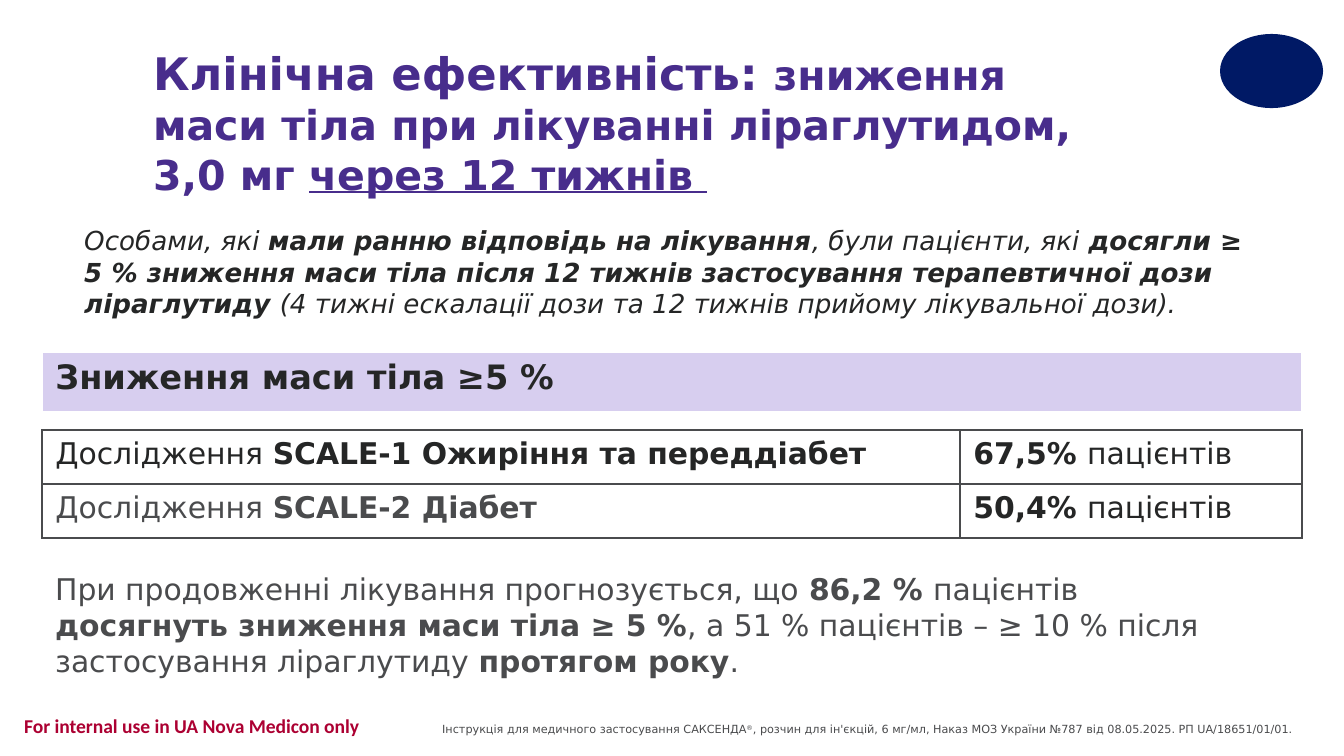
from lxml import etree
from pptx import Presentation
from pptx.dml.color import RGBColor
from pptx.enum.shapes import MSO_SHAPE
from pptx.enum.text import MSO_ANCHOR, MSO_AUTO_SIZE, PP_ALIGN
from pptx.oxml.ns import qn
from pptx.util import Emu, Pt

OVAL = MSO_SHAPE.OVAL
TOP = MSO_ANCHOR.TOP
NO_FIT, GROW = MSO_AUTO_SIZE.NONE, MSO_AUTO_SIZE.SHAPE_TO_FIT_TEXT
LEFT, RIGHT = PP_ALIGN.LEFT, PP_ALIGN.RIGHT

PURPLE = RGBColor(0x48, 0x2D, 0x8C)
LILAC = RGBColor(0xD7, 0xCE, 0xEF)
INK = RGBColor(0x25, 0x26, 0x26)
GREY = RGBColor(0x4A, 0x4B, 0x4D)
CRIMSON = RGBColor(0xAC, 0x00, 0x32)
NAVY = RGBColor(0x00, 0x19, 0x65)
WHITE = RGBColor(0xFF, 0xFF, 0xFF)

EMU_PER_PX = 914400 / 134.4
SLIDE_WIDTH, SLIDE_HEIGHT = 1344, 756
MARGIN = 42
TABLE_WIDTH = SLIDE_WIDTH - 2 * MARGIN


def px(length):
    return Emu(round(length * EMU_PER_PX))


class SlideBuilder:
    font = "DejaVu Sans"

    def __init__(self, deck):
        self.page = deck.slides.add_slide(deck.slide_layouts[5])

    def add_spans(self, para, spans, size, color, font=None, **shared):
        """Add (text, settings) spans; shared settings apply to all of them."""
        for text, settings in spans:
            style = {**shared, **settings}
            span = para.add_run()
            span.text = text
            span.font.name = font or self.font
            span.font.size = Pt(style.get("size", size))
            span.font.color.rgb = color
            span.font.bold = style.get("bold", False)
            span.font.italic = style.get("italic")
            span.font.underline = style.get("underline")
            if style.get("superscript"):
                span.font._element.set("baseline", "30000")

    def set_insets(self, text_frame, left, top, right, bottom):
        text_frame.margin_left, text_frame.margin_top = px(left), px(top)
        text_frame.margin_right, text_frame.margin_bottom = px(right), px(bottom)

    def title(self, frame, spans, size, color):
        box = self.page.shapes.title
        box.left, box.top, box.width, box.height = map(px, frame)
        self.set_insets(box.text_frame, 0, 0, 0, 0)
        box.text_frame.word_wrap = True
        box.text_frame.auto_size = NO_FIT
        box.text_frame.vertical_anchor = TOP
        para = box.text_frame.paragraphs[0]
        para.alignment = LEFT
        self.add_spans(para, spans, size, color, bold=True)

    def text(self, frame, spans, size, color, insets=None, align=LEFT,
             fit=GROW, spacing=None, **shared):
        box = self.page.shapes.add_textbox(*map(px, frame))
        box.text_frame.word_wrap = True
        box.text_frame.auto_size = fit
        if insets:
            self.set_insets(box.text_frame, *insets)
        para = box.text_frame.paragraphs[0]
        para.alignment = align
        para.line_spacing = spacing
        self.add_spans(para, spans, size, color, **shared)

    def oval(self, frame, color):
        shape = self.page.shapes.add_shape(OVAL, *map(px, frame))
        shape.shadow.inherit = False
        shape.fill.solid()
        shape.fill.fore_color.rgb = color
        shape.line.fill.background()

    def table(self, left, top, widths, row_height, rows, size, fill, border):
        """Each cell in rows is a pair of text colour and spans."""
        table = self.page.shapes.add_table(
            len(rows), len(widths), px(left), px(top),
            px(sum(widths)), px(row_height * len(rows))).table
        table.first_row = table.horz_banding = False
        for column, width in zip(table.columns, widths):
            column.width = px(width)
        for r, row in enumerate(rows):
            for c, (color, spans) in enumerate(row):
                cell = table.cell(r, c)
                self.border(cell, border)
                cell.fill.solid()
                cell.fill.fore_color.rgb = fill
                self.add_spans(cell.text_frame.paragraphs[0], spans, size, color)

    def border(self, cell, color):
        properties = cell._tc.get_or_add_tcPr()
        for side in ("lnL", "lnR", "lnT", "lnB"):
            line = etree.SubElement(properties, qn("a:" + side), w=str(Pt(1)))
            solid = etree.SubElement(line, qn("a:solidFill"))
            etree.SubElement(solid, qn("a:srgbClr"), val=str(color))


def main():
    deck = Presentation()
    deck.slide_width, deck.slide_height = px(SLIDE_WIDTH), px(SLIDE_HEIGHT)
    slide = SlideBuilder(deck)
    plain, bold = {}, {"bold": True}

    slide.text((11, 707, 407, 39),
               [("For internal use in UA Nova Medicon only", bold)],
               10.5, CRIMSON, font="Calibri")
    slide.text((401, 720, 923, 26), [
        ("Інструкція для медичного застосування САКСЕНДА", plain),
        ("®", {"superscript": True}),
        (", розчин для ін'єкцій, 6 мг/мл, Наказ МОЗ України №787 від 08.05.2025. "
         "РП UA/18651/01/01.", plain),
    ], 6, GREY, insets=(0, 0, 32, 0), align=RIGHT, fit=NO_FIT, spacing=1.2)
    slide.oval((1220, 34, 103, 74), NAVY)

    slide.title((153, 46, 920, 117), [
        ("Клінічна ефективність: ", {"size": 24}),
        ("зниження маси тіла при лікуванні ліраглутидом, 3,0 мг ", plain),
        ("через 12 тижнів ", {"underline": True}),
    ], 22, PURPLE)

    slide.table(MARGIN, 352, [TABLE_WIDTH], 60,
                [[(INK, [("Зниження маси тіла ≥5 %", bold)])]], 18, LILAC, WHITE)
    studies = [
        (INK, "SCALE-1 Ожиріння та переддіабет", "67,5% "),
        (GREY, "SCALE-2 Діабет", "50,4% "),
    ]
    slide.table(MARGIN, 430, [918, TABLE_WIDTH - 918], 54, [
        [(color, [("Дослідження ", plain), (study, bold)]),
         (INK, [(share, bold), ("пацієнтів", plain)])]
        for color, study, share in studies
    ], 16, WHITE, GREY)

    slide.text((71, 218, 1196, 109), [
        ("Особами, які ", plain),
        ("мали ранню відповідь на лікування", bold),
        (", були пацієнти, які ", plain),
        ("досягли ≥ 5 % зниження маси тіла після 12 тижнів застосування "
         "терапевтичної дози ліраглутиду ", bold),
        ("(4 тижні ескалації дози та 12 тижнів прийому лікувальної дози).", plain),
    ], 14, INK, italic=True)
    slide.text((MARGIN, 564, 1231, 122), [
        ("При продовженні лікування прогнозується, що ", plain),
        ("86,2 % ", bold),
        ("пацієнтів ", plain),
        ("досягнуть зниження маси тіла ≥ 5 %", bold),
        (", а 51 % пацієнтів – ≥ 10 % після застосування ліраглутиду ", plain),
        ("протягом року", bold),
        (".", plain),
    ], 16, GREY)

    deck.save("out.pptx")


if __name__ == "__main__":
    main()
